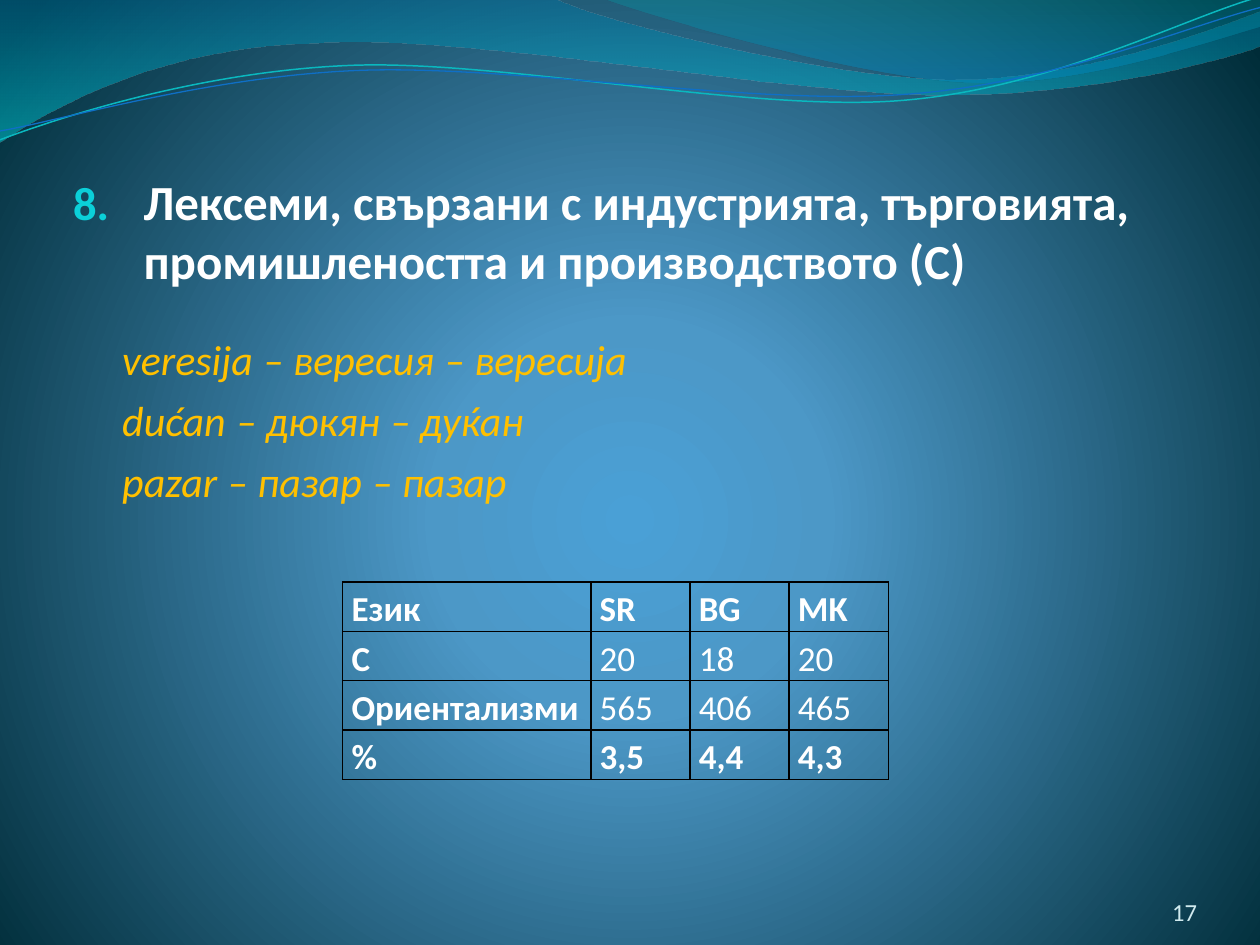
import lxml.etree
import pptx
import pptx.dml.color
import pptx.enum.text
import pptx.oxml
import pptx.oxml.ns
import pptx.util

Inches, Pt = pptx.util.Inches, pptx.util.Pt
PP_ALIGN, MSO_ANCHOR = pptx.enum.text.PP_ALIGN, pptx.enum.text.MSO_ANCHOR
qn = pptx.oxml.ns.qn
FONT = "Calibri"
WHITE, GOLD, CYAN = "FFFFFF", "FFC000", "0BD0D9"

# Waves: start point, then segments (2 numbers: line, 6 numbers: Bezier curve)
BANDS = [
    ((0, 0), [(4.4, -0.01), (4.76, 0.17, 6.64, 0.63, 7.58, 0.63),
              (8.53, 0.63, 9.58, 0.26, 10, 0.09), (10.01, 0.36),
              (9.83, 0.44, 8.7, 0.76, 7.46, 0.75),
              (6.22, 0.75, 3.82, 0.28, 2.57, 0.34),
              (1.29, 0.36, 0.46, 0.83, -0.01, 1.13)],
     [(0, "0074A1", 45), (100, "00C6CF", 55)]),
    ((4.79, -0.01), [(5.09, 0.11, 6.82, 0.62, 7.69, 0.65),
                     (8.56, 0.69, 9.61, 0.32, 10, 0.21), (10, 0)],
     [(0, "00A1A9", 30), (80, "008BBF", 45)]),
]
STRANDS = [
    ((0, 1.11), [(0.48, 0.93, 1.58, 0.57, 2.77, 0.52),
                 (3.95, 0.47, 5.93, 0.89, 7.13, 0.8),
                 (8.33, 0.71, 9.38, 0.15, 9.98, -0.02)], "0AB8BF", 0.85),
    ((0, 1.04), [(0.47, 0.96, 1.64, 0.61, 2.83, 0.56),
                 (4.03, 0.51, 5.97, 0.84, 7.17, 0.75),
                 (8.36, 0.67, 9.41, 0.21, 10, 0.06)], "0F6FC6", 0.75),
]

HEADING = "Лексеми, свързани с индустрията, търговията, промишлеността и производството (C)"
EXAMPLES = ["veresija ‒ вересия ‒ вересија", "dućan ‒ дюкян ‒ дуќан",
            "pazar ‒ пазар ‒ пазар"]
COUNTS = [["Език", "SR", "BG", "MK"],
          ["C", "20", "18", "20"],
          ["Ориентализми", "565", "406", "465"],
          ["%", "3,5", "4,4", "4,3"]]


def color(value):
    return pptx.dml.color.RGBColor.from_string(value)


def add_xml(parent, tag, **attrs):
    child = lxml.etree.SubElement(parent, qn(tag))
    for name, value in attrs.items():
        child.set(name, str(value))
    return child


def add_run(p, text, rgb, **formats):
    r = p.add_run()
    r.text = text
    r.font.color.rgb = color(rgb)
    for name, value in {"name": FONT, **formats}.items():
        setattr(r.font, name, value)


def set_gradient(fill, element, stops):
    """Fill with (position, colour, opacity) stops; return the gradient element."""
    fill.gradient()
    grad = element.find(".//" + qn("a:gradFill"))
    for child in list(grad):
        grad.remove(child)
    stop_list = add_xml(grad, "a:gsLst")
    for position, rgb, opacity in stops:
        stop = add_xml(stop_list, "a:gs", pos=position * 1000)
        clr = add_xml(stop, "a:srgbClr", val=rgb)
        if opacity < 100:
            add_xml(clr, "a:alpha", val=opacity * 1000)
    return grad


def add_wave(s, box, start, segments, close):
    """Freeform whose six-number segments become true Bezier curves."""
    points = [start]
    for seg in segments:
        points += zip(seg[::2], seg[1::2])
    points = [(box[0] + Inches(x), box[1] + Inches(y)) for x, y in points]
    builder = s.shapes.build_freeform(*points[0])
    builder.add_line_segments(points[1:], close=close)
    sp = builder.convert_to_shape()
    sp.shadow.inherit = False
    steps = iter(sp.element.findall(".//" + qn("a:lnTo")))
    for seg in segments:
        first, *rest = [next(steps) for _ in range(len(seg) // 2)]
        if rest:
            curve = lxml.etree.Element(qn("a:cubicBezTo"))
            first.addprevious(curve)
            for step in (first, *rest):
                curve.append(step[0])
                step.getparent().remove(step)
    return sp


def add_backdrop(s, box):
    # Radial background
    grad = set_gradient(s.background.fill, s.element,
                        [(0, "4AA0D6", 100), (25, "4C98C7", 100), (100, "002C38", 100)])
    circle = add_xml(grad, "a:path", path="circle")
    add_xml(circle, "a:fillToRect", l=10000, t=110000, r=10000, b=100000)
    # Translucent bands
    for start, segments, stops in BANDS:
        sp = add_wave(s, box, start, segments, True)
        grad = set_gradient(sp.fill, sp.element, stops)
        add_xml(grad, "a:lin", ang=5400000, scaled=1)
        sp.line.fill.background()
    # Thin strands
    for start, segments, rgb, width in STRANDS:
        sp = add_wave(s, box, start, segments, False)
        sp.fill.background()
        sp.line.color.rgb = color(rgb)
        sp.line.width = Pt(width)


def format_paragraph(p, before, left, indent):
    p.alignment = PP_ALIGN.LEFT
    p.space_before = Pt(before)
    pPr = p._p.get_or_add_pPr()
    pPr.set("marL", str(Inches(left)))
    pPr.set("indent", str(Inches(indent)))
    return pPr


def add_body(sp, box):
    sp.left, sp.top, sp.width, sp.height = box
    tf = sp.text_frame
    for name, value in {"margin_left": 0, "margin_top": Inches(0.05),
                        "margin_right": Inches(0.02), "margin_bottom": Inches(0.05),
                        "word_wrap": True, "vertical_anchor": MSO_ANCHOR.TOP,
                        "auto_size": pptx.enum.text.MSO_AUTO_SIZE.NONE}.items():
        setattr(tf, name, value)
    # Numbered heading
    p = tf.paragraphs[0]
    pPr = format_paragraph(p, 5.6, 0.56, -0.56)
    add_xml(add_xml(pPr, "a:buClr"), "a:srgbClr", val=CYAN)
    add_xml(pPr, "a:buSzPct", val=95000)
    add_xml(pPr, "a:buFont", typeface=FONT)
    add_xml(pPr, "a:buAutoNum", type="arabicPeriod", startAt=8)
    add_run(p, HEADING, WHITE, size=Pt(28), bold=True)
    # Examples, the first one set apart from the heading
    for i, text in enumerate(EXAMPLES):
        p = tf.add_paragraph()
        pPr = format_paragraph(p, 6 if i else 25.5, 0.39, 0)
        add_xml(pPr, "a:buNone")
        add_run(p, text, GOLD, size=Pt(24), bold=False, italic=True)


def add_borders(cell):
    tcPr = cell._tc.get_or_add_tcPr()
    for i, side in enumerate(("a:lnL", "a:lnR", "a:lnT", "a:lnB")):
        ln = lxml.etree.Element(qn(side), w=str(Pt(1)))
        add_xml(add_xml(ln, "a:solidFill"), "a:srgbClr", val="000000")
        tcPr.insert(i, ln)


def add_counts(s, box):
    rows, cols = len(COUNTS), len(COUNTS[0])
    table = s.shapes.add_table(rows, cols, *box).table
    table.first_row = table.horz_banding = False
    label_width = Inches(1.97)
    for i, column in enumerate(table.columns):
        column.width = (box[2] - label_width) // (cols - 1) if i else label_width
    for i, values in enumerate(COUNTS):
        table.rows[i].height = box[3] // rows
        for j, text in enumerate(values):
            cell = table.cell(i, j)
            cell.fill.background()
            cell.margin_left = cell.margin_right = Inches(0.07)
            cell.margin_top = cell.margin_bottom = 0
            add_borders(cell)
            p = cell.text_frame.paragraphs[0]
            p.line_spacing = 1.15
            add_run(p, text, WHITE, size=Pt(20), bold=i in (0, rows - 1) or j == 0)


def add_page_number(s, box):
    tf = s.shapes.add_textbox(*box).text_frame
    tf.margin_left = tf.margin_top = tf.margin_right = tf.margin_bottom = 0
    tf.word_wrap = True
    tf.vertical_anchor = MSO_ANCHOR.BOTTOM
    p = tf.paragraphs[0]
    p.alignment = PP_ALIGN.RIGHT
    add_run(p, "17", "D1EAEE", size=Pt(14))


def inch_box(*lengths):
    return [Inches(v) for v in lengths]


def main():
    prs = pptx.Presentation()
    prs.slide_width, prs.slide_height = Inches(10), Inches(7.5)
    s = prs.slides.add_slide(prs.slide_layouts[0])
    title = s.shapes.title.element
    title.getparent().remove(title)
    add_backdrop(s, inch_box(0, 0, 10, 1.14))
    add_body(s.placeholders[1], inch_box(0.58, 1.31, 8.91, 5.75))
    add_counts(s, inch_box(2.72, 4.62, 4.33, 1.53))
    add_page_number(s, inch_box(8.67, 6.95, 0.83, 0.4))
    prs.save("out.pptx")


if __name__ == "__main__":
    main()
